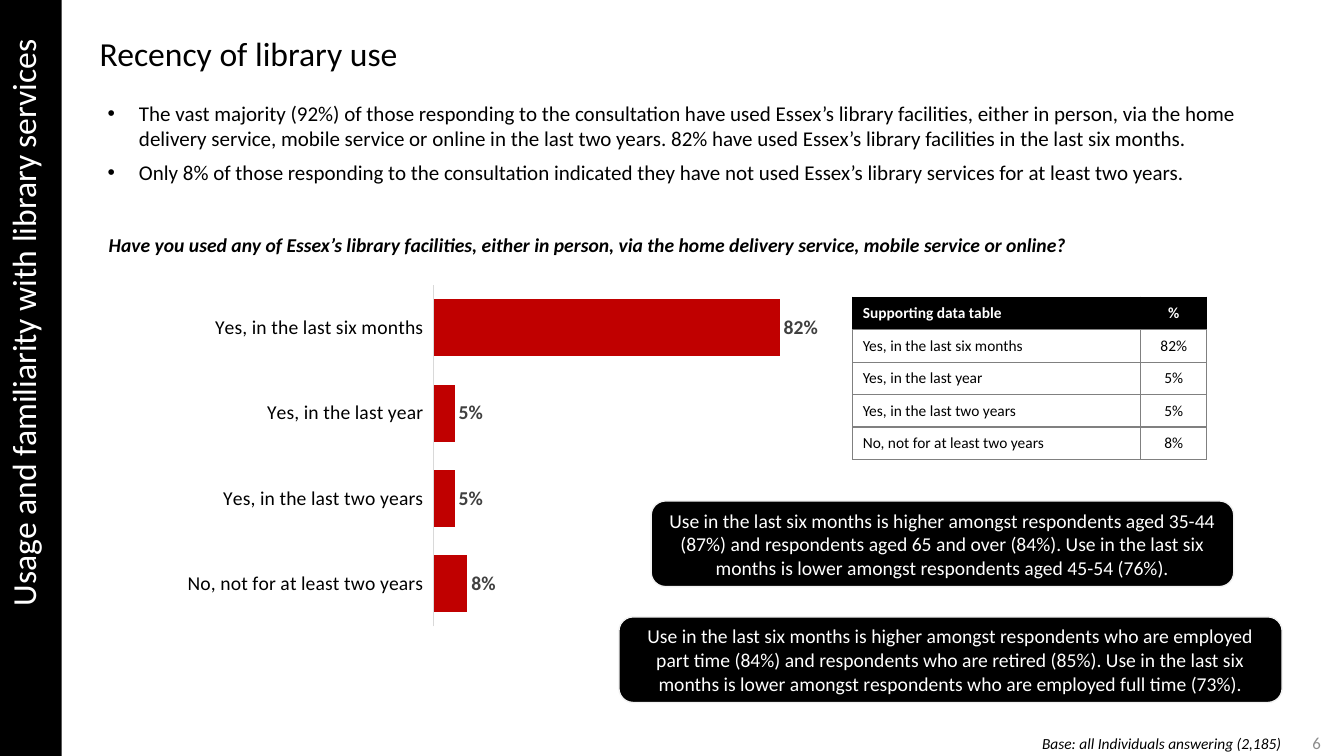
from dataclasses import dataclass, field
from typing import Any

from lxml.etree import SubElement
from pptx import Presentation
from pptx.chart.data import CategoryChartData
from pptx.dml.color import RGBColor
from pptx.enum.chart import XL_CHART_TYPE, XL_LABEL_POSITION, XL_TICK_LABEL_POSITION, XL_TICK_MARK
from pptx.enum.shapes import MSO_SHAPE
from pptx.enum.text import MSO_ANCHOR, MSO_AUTO_SIZE, PP_ALIGN
from pptx.oxml.ns import qn
from pptx.util import Inches, Pt

WIDTH, HEIGHT = Inches(13.333), Inches(7.5)
BLACK, WHITE, GREY, RED = "000000", "FFFFFF", "808080", "C00000"

ANSWERS = {
    "Yes, in the last six months": 0.82,
    "Yes, in the last year": 0.05,
    "Yes, in the last two years": 0.05,
    "No, not for at least two years": 0.08,
}


@dataclass
class Area:
    left: float
    top: float
    width: float
    height: float

    def lengths(self) -> tuple[int, int, int, int]:
        return across(self.left), down(self.top), across(self.width), down(self.height)


@dataclass
class Block:
    area: Area
    paragraphs: list[str]
    size: int
    color: str = BLACK
    style: dict[str, Any] = field(default_factory=dict)
    layout: dict[str, Any] = field(default_factory=dict)
    frame: dict[str, Any] = field(default_factory=dict)
    shape: Any = None
    line: str = ""
    bullets: bool = False
    vertical: bool = False


def across(share: float) -> int:
    return round(WIDTH * share / 100)


def down(share: float) -> int:
    return round(HEIGHT * share / 100)


def color_of(value: str) -> RGBColor:
    return RGBColor.from_string(value)


def apply(target: Any, values: dict[str, Any]) -> None:
    for name, value in values.items():
        setattr(target, name, value)


def set_font(font: Any, size: int, color: str, **style: Any) -> None:
    apply(font, {"name": "Calibri", "size": Pt(size), **style})
    font.color.rgb = color_of(color)


def paint(shape_fill: Any, color: str) -> None:
    shape_fill.solid()
    shape_fill.fore_color.rgb = color_of(color)


def add_bullet(para: Any) -> None:
    para.space_before = Pt(6)
    properties = para._p.get_or_add_pPr()
    properties.set("marL", str(Inches(0.31)))
    properties.set("indent", str(-Inches(0.31)))
    SubElement(properties, qn("a:buFont")).set("typeface", "Arial")
    SubElement(properties, qn("a:buChar")).set("char", "•")


def add_block(page: Any, block: Block) -> None:
    if block.shape is None:
        box = page.shapes.add_textbox(*block.area.lengths())
    else:
        box = page.shapes.add_shape(block.shape, *block.area.lengths())
        box.shadow.inherit = False
        paint(box.fill, BLACK)
        if block.line:
            box.line.color.rgb = color_of(block.line)
            box.line.width = Pt(1)
        else:
            box.line.fill.background()
    frame = box.text_frame
    apply(frame, {"word_wrap": True, **block.frame})
    if block.vertical:
        frame._txBody.bodyPr.set("vert", "vert270")
    for index, text in enumerate(block.paragraphs):
        para = frame.add_paragraph() if index else frame.paragraphs[0]
        apply(para, {"alignment": PP_ALIGN.LEFT, **block.layout})
        if block.bullets:
            add_bullet(para)
        span = para.add_run()
        span.text = text
        set_font(span.font, block.size, block.color, **block.style)


def add_answer_chart(page: Any, area: Area) -> None:
    data = CategoryChartData(number_format="0%")
    data.categories = list(ANSWERS)
    data.add_series("Series 1", list(ANSWERS.values()))
    chart = page.shapes.add_chart(XL_CHART_TYPE.BAR_CLUSTERED, *area.lengths(), data).chart
    apply(chart, {"has_legend": False, "has_title": False})
    set_font(chart.font, 10, BLACK)

    categories = chart.category_axis
    apply(categories, {
        "reverse_order": True,
        "has_major_gridlines": False,
        "major_tick_mark": XL_TICK_MARK.NONE,
        "minor_tick_mark": XL_TICK_MARK.NONE,
        "tick_label_position": XL_TICK_LABEL_POSITION.LOW,
    })
    set_font(categories.tick_labels.font, 14, BLACK)
    categories.format.line.color.rgb = color_of("D9D9D9")
    categories.format.line.width = Pt(0.75)
    apply(chart.value_axis, {
        "visible": False,
        "has_major_gridlines": False,
        "minimum_scale": 0,
        "maximum_scale": 1.5,
    })

    plot = chart.plots[0]
    apply(plot, {"gap_width": 50, "vary_by_categories": False, "has_data_labels": True})
    paint(plot.series[0].format.fill, RED)
    apply(plot.data_labels, {
        "show_value": True,
        "number_format": "0%",
        "number_format_is_linked": False,
        "position": XL_LABEL_POSITION.OUTSIDE_END,
    })
    set_font(plot.data_labels.font, 14, "404040", bold=True)

    plot_area = chart._chartSpace.chart.plotArea
    for old in plot_area.findall(qn("c:layout")):
        plot_area.remove(old)
    layout = SubElement(plot_area, qn("c:layout"))
    plot_area.insert(0, layout)
    manual = SubElement(layout, qn("c:manualLayout"))
    settings = {"layoutTarget": "inner", "xMode": "edge", "yMode": "edge",
                "x": "0.406", "y": "0.017", "w": "0.594", "h": "0.948"}
    for name, value in settings.items():
        SubElement(manual, qn(f"c:{name}")).set("val", value)


def add_borders(cell: Any, colors: dict[str, str]) -> None:
    properties = cell._tc.get_or_add_tcPr()
    for side, color in colors.items():
        line = SubElement(properties, qn(f"a:ln{side}"), w=str(Pt(1)))
        SubElement(SubElement(line, qn("a:solidFill")), qn("a:srgbClr")).set("val", color)


def add_answer_table(page: Any, area: Area, columns: list[float]) -> None:
    rows = [("Supporting data table", "%")]
    rows += [(answer, f"{share:.0%}") for answer, share in ANSWERS.items()]
    table = page.shapes.add_table(len(rows), len(columns), *area.lengths()).table
    table.horz_banding = False
    for column, width in zip(table.columns, columns):
        column.width = across(width)
    for row_index, texts in enumerate(rows):
        header = row_index == 0
        for column_index, text in enumerate(texts):
            cell = table.cell(row_index, column_index)
            apply(cell, {
                "vertical_anchor": MSO_ANCHOR.MIDDLE,
                "margin_top": Inches(0.02),
                "margin_bottom": Inches(0.02),
            })
            edge = BLACK if header else GREY
            add_borders(cell, {"L": edge, "R": edge, "T": edge, "B": GREY})
            paint(cell.fill, BLACK if header else WHITE)
            para = cell.text_frame.paragraphs[0]
            para.alignment = PP_ALIGN.CENTER if column_index else PP_ALIGN.LEFT
            span = para.add_run()
            span.text = text
            set_font(span.font, 11, WHITE if header else BLACK, bold=header)


GROW = {"auto_size": MSO_AUTO_SIZE.SHAPE_TO_FIT_TEXT}
MIDDLE = {"vertical_anchor": MSO_ANCHOR.MIDDLE}
CALLOUT = {"size": 14, "color": WHITE, "layout": {"alignment": PP_ALIGN.CENTER}, "frame": MIDDLE,
           "shape": MSO_SHAPE.ROUNDED_RECTANGLE, "line": "F2F2F2"}
SIDEBAR = {**MIDDLE, "margin_left": Inches(0.1), "margin_top": Inches(0.39),
           "margin_right": Inches(0.16), "margin_bottom": 0}

BLOCKS = [
    Block(Area(0, 0, 4.58, 100), ["Usage and familiarity with library services"], 24, WHITE,
          layout={"alignment": PP_ALIGN.RIGHT, "line_spacing": 0.9}, frame=SIDEBAR,
          shape=MSO_SHAPE.RECTANGLE, vertical=True),
    Block(Area(6.68, 3.73, 81, 6.67), ["Recency of library use"], 24, frame=GROW),
    Block(Area(7.28, 12.67, 88.8, 12.53), [
        "The vast majority (92%) of those responding to the consultation have used Essex’s library facilities, either in person, via the home delivery service, mobile service or online in the last two years. 82% have used Essex’s library facilities in the last six months.",
        "Only 8% of those responding to the consultation indicated they have not used Essex’s library services for at least two years.",
    ], 15, frame=GROW, bullets=True),
    Block(Area(7.35, 30.13, 84.45, 4.53), ["Have you used any of Essex’s library facilities, either in person, via the home delivery service, mobile service or online?"],
          14, style={"bold": True, "italic": True}, frame=GROW),
    Block(Area(48.45, 66.27, 43.35, 11.33), ["Use in the last six months is higher amongst respondents aged 35-44 (87%) and respondents aged 65 and over (84%). Use in the last six months is lower amongst respondents aged 45-54 (76%)."], **CALLOUT),
    Block(Area(46.05, 81.6, 49.35, 11.33), ["Use in the last six months is higher amongst respondents who are employed part time (84%) and respondents who are retired (85%). Use in the last six months is lower amongst respondents who are employed full time (73%)."], **CALLOUT),
    Block(Area(76.8, 96.4, 21.68, 3.87), ["Base: all Individuals answering (2,185)"], 11, style={"italic": True}, frame=GROW),
    Block(Area(95.48, 96.53, 3.53, 3.47), ["6"], 12, "8C8C8C",
          layout={"alignment": PP_ALIGN.RIGHT}, frame=MIDDLE),
]


def main() -> None:
    deck = Presentation()
    apply(deck, {"slide_width": WIDTH, "slide_height": HEIGHT})
    page = deck.slides.add_slide(deck.slide_layouts[6])
    add_answer_chart(page, Area(0.08, 36.93, 79.28, 47.6))
    add_answer_table(page, Area(63.45, 39.33, 26.35, 21.45), [21.43, 4.92])
    for block in BLOCKS:
        add_block(page, block)
    deck.save("out.pptx")


if __name__ == "__main__":
    main()
